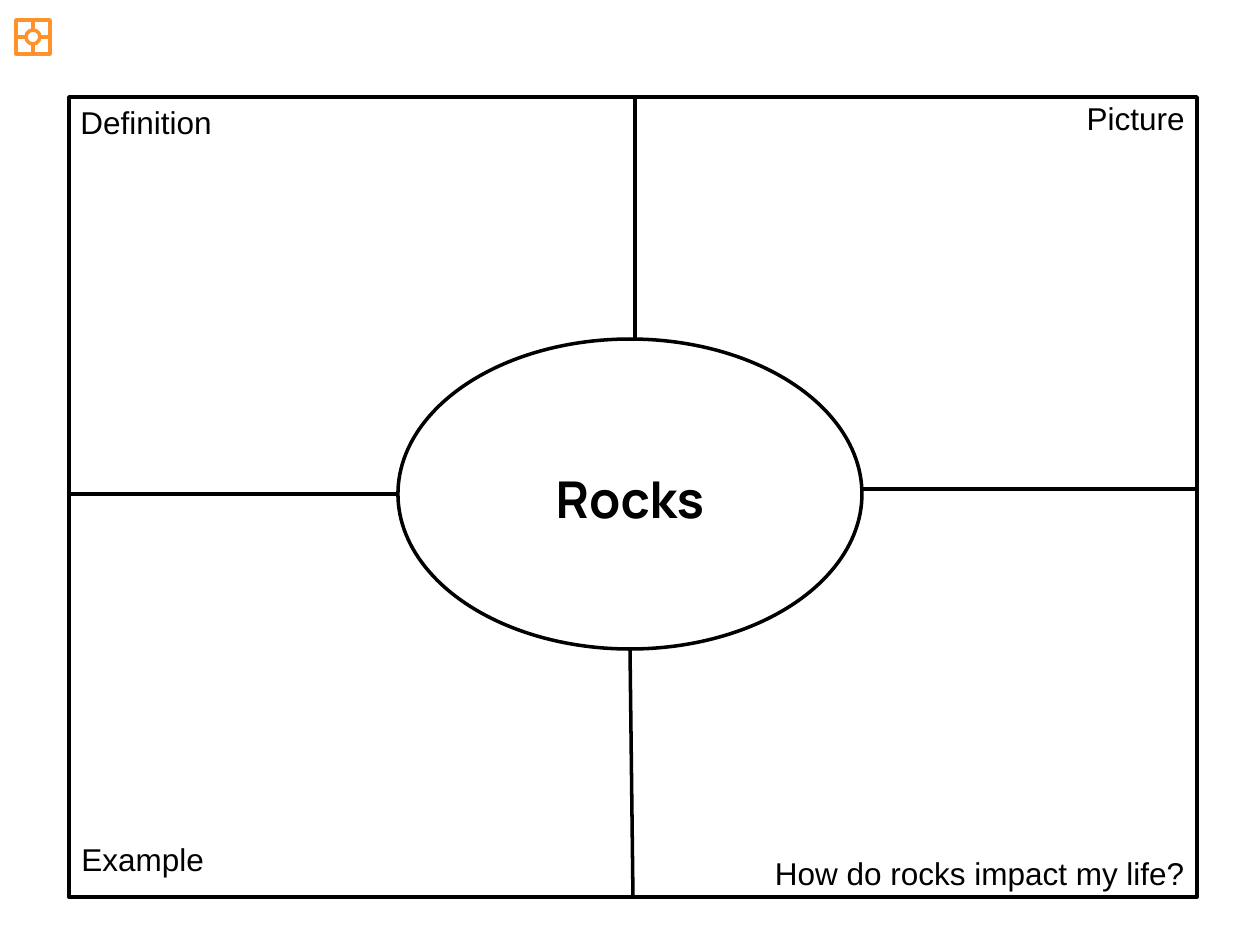
from lxml import etree
from pptx import Presentation
from pptx.dml.color import RGBColor
from pptx.enum.shapes import MSO_CONNECTOR, MSO_SHAPE
from pptx.enum.text import MSO_ANCHOR, MSO_AUTO_SIZE, PP_ALIGN
from pptx.oxml.ns import qn
from pptx.util import Pt

RECT, OVAL = MSO_SHAPE.RECTANGLE, MSO_SHAPE.OVAL
STRAIGHT = MSO_CONNECTOR.STRAIGHT
LEFT, MID, RIGHT = PP_ALIGN.LEFT, PP_ALIGN.CENTER, PP_ALIGN.RIGHT
TOP, FIXED = MSO_ANCHOR.TOP, MSO_AUTO_SIZE.NONE
PX = 914400 / 126
BLACK, WHITE, ORANGE = "000000", "FFFFFF", "FF932B"


def emu(*nums):
    return [round(n * PX) for n in nums]


def color(code):
    return RGBColor.from_string(code)


deck = Presentation()
deck.slide_width, deck.slide_height = emu(1260, 945)
slide = deck.slides.add_slide(deck.slide_layouts[5])
shapes = slide.shapes

# Each group: box, lines, oval and ink; the icon is a small twin of the chart
groups = [
    ((16, 20, 34, 34),
     [(33, 20, 33, 30), (33, 44, 33, 54), (16, 37, 26, 37), (40, 37, 50, 37)],
     (26, 30, 14, 14), ORANGE),
    ((69, 97, 1128, 800),
     [(635, 97, 635, 339), (630, 649, 633, 897),
      (69, 494, 398, 494), (862, 489, 1197, 489)],
     (398, 339, 464, 310), BLACK),
]
for frame, lines, oval, ink in groups:
    parts = [shapes.add_shape(RECT, *emu(*frame))]
    parts[0].fill.background()
    for ends in lines:
        line = shapes.add_connector(STRAIGHT, *emu(*ends))
        etree.SubElement(line._element.spPr, qn("a:effectLst"))
        parts.append(line)
    center = shapes.add_shape(OVAL, *emu(*oval))
    center.fill.solid()
    center.fill.fore_color.rgb = color(WHITE)
    parts.append(center)
    for part in parts:
        part.line.color.rgb = color(ink)
        part.line.width = Pt(2)
    for part in (parts[0], center):
        part.shadow.inherit = False

# The title goes in front of the oval
title = shapes.title
shapes._spTree.append(title._element)
title.left, title.top, title.width, title.height = emu(412, 461, 436, 74)

plain = {"name": "Arial", "size": Pt(18), "bold": False}
strong = {"name": "Manrope", "size": Pt(29), "bold": True}
labels = [
    ("Definition", (68, 97, 170, 50), LEFT),
    ("Example", (69, 834, 170, 50), LEFT),
    ("Picture", (1027, 93, 170, 50), RIGHT),
    ("How do rocks impact my life?", (605, 848, 592, 50), RIGHT),
]
texts = [(shapes.add_textbox(*emu(*spot)), words, align, plain)
         for words, spot, align in labels]
texts.append((title, "Rocks", MID, strong))
for box, words, align, style in texts:
    frame = box.text_frame
    frame.word_wrap = True
    frame.auto_size = FIXED
    frame.vertical_anchor = TOP
    para = frame.paragraphs[0]
    para.alignment = align
    run = para.add_run()
    run.text = words
    for key, value in style.items():
        setattr(run.font, key, value)
    run.font.color.rgb = color(BLACK)

deck.save("out.pptx")
